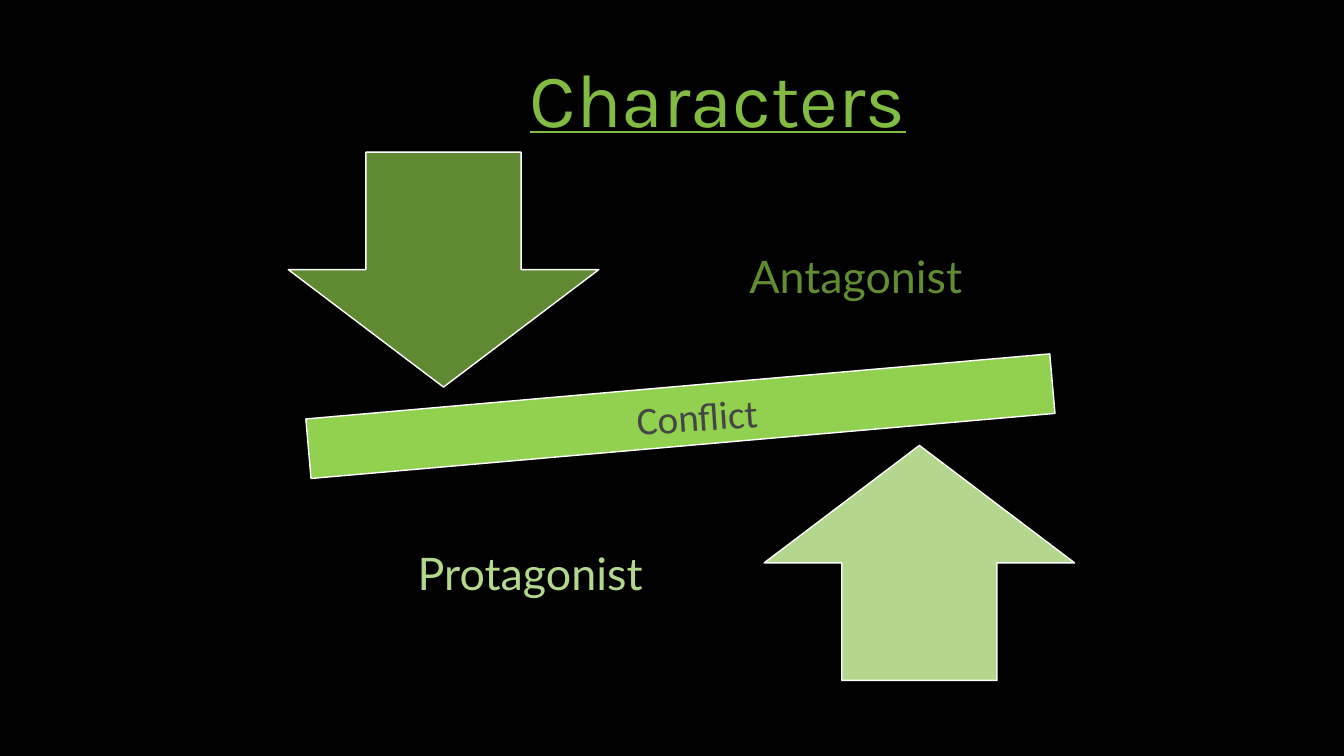
from pptx import Presentation
from pptx.dml.color import RGBColor
from pptx.enum.shapes import MSO_SHAPE as Preset
from pptx.enum.text import MSO_ANCHOR as Anchor, PP_ALIGN as Align
from pptx.util import Pt

# Content: boxes are left, top, width, height in points
COLORS = {
    "background": "000000", "outline": "FFFFFF", "title": "81BB42",
    "beam": "92D050", "down": "5F8A31", "up": "B3D78D",
    "antagonist": "618C32", "protagonist": "B3D78D", "conflict": "454545",
}
TITLE = ("Characters", (169.2, 33.1, 686.9, 72.7))
ARROW_SIZE = (221.8, 167.8)
SHAPES = [  # preset, color, box, rotation
    (Preset.MATH_MINUS, "beam", (123.1, 206.6, 725.8, 181.4), 355),
    (Preset.DOWN_ARROW, "down", (205.9, 108.7, *ARROW_SIZE), 0),
    (Preset.UP_ARROW, "up", (545.8, 318.2, *ARROW_SIZE), 0),
]
LABELS = [  # text, color, font, size, box, margin, line spacing, rotation
    ("Protagonist", "protagonist", "Lato", 32, (260.6, 375.8, 236.2, 71.3), 18, 0.9, 0),
    ("Antagonist", "antagonist", "Lato", 32, (493.2, 147.6, 236.2, 103), 18, 0.9, 0),
    ("Conflict", "conflict", "Calibri", 28, (376.6, 276.5, 242.6, 41), 3.6, 1, 356.1),
]


def color(name):
    return RGBColor.from_string(COLORS[name])


def points(box):
    return [Pt(length) for length in box]


def write(shape, text, color_name, font_name, size, margin=3.6, line_spacing=1):
    frame = shape.text_frame
    frame.text = text
    frame.word_wrap = True
    frame.vertical_anchor = Anchor.MIDDLE
    frame.margin_left = frame.margin_right = Pt(max(margin, 7.2))
    frame.margin_top = frame.margin_bottom = Pt(margin)
    paragraph = frame.paragraphs[0]
    paragraph.alignment = Align.CENTER
    paragraph.line_spacing = line_spacing
    font = paragraph.runs[0].font
    font.name, font.size = font_name, Pt(size)
    font.color.rgb = color(color_name)
    return font


presentation = Presentation()
presentation.slide_width, presentation.slide_height = Pt(960), Pt(540)
slide = presentation.slides.add_slide(presentation.slide_layouts[5])
slide.background.fill.solid()
slide.background.fill.fore_color.rgb = color("background")

# Seesaw beam and arrows
for preset, name, box, rotation in SHAPES:
    shape = slide.shapes.add_shape(preset, *points(box))
    shape.rotation = rotation
    shape.shadow.inherit = False
    shape.fill.solid()
    shape.fill.fore_color.rgb = color(name)
    shape.line.color.rgb = color("outline")
    shape.line.width = Pt(1)

# Labels
for text, name, font_name, size, box, margin, line_spacing, rotation in LABELS:
    label = slide.shapes.add_textbox(*points(box))
    label.rotation = rotation
    write(label, text, name, font_name, size, margin, line_spacing)

# Title
text, box = TITLE
title = slide.shapes.title
title.left, title.top, title.width, title.height = points(box)
write(title, text, "title", "Karla", 54).underline = True

presentation.save("out.pptx")
